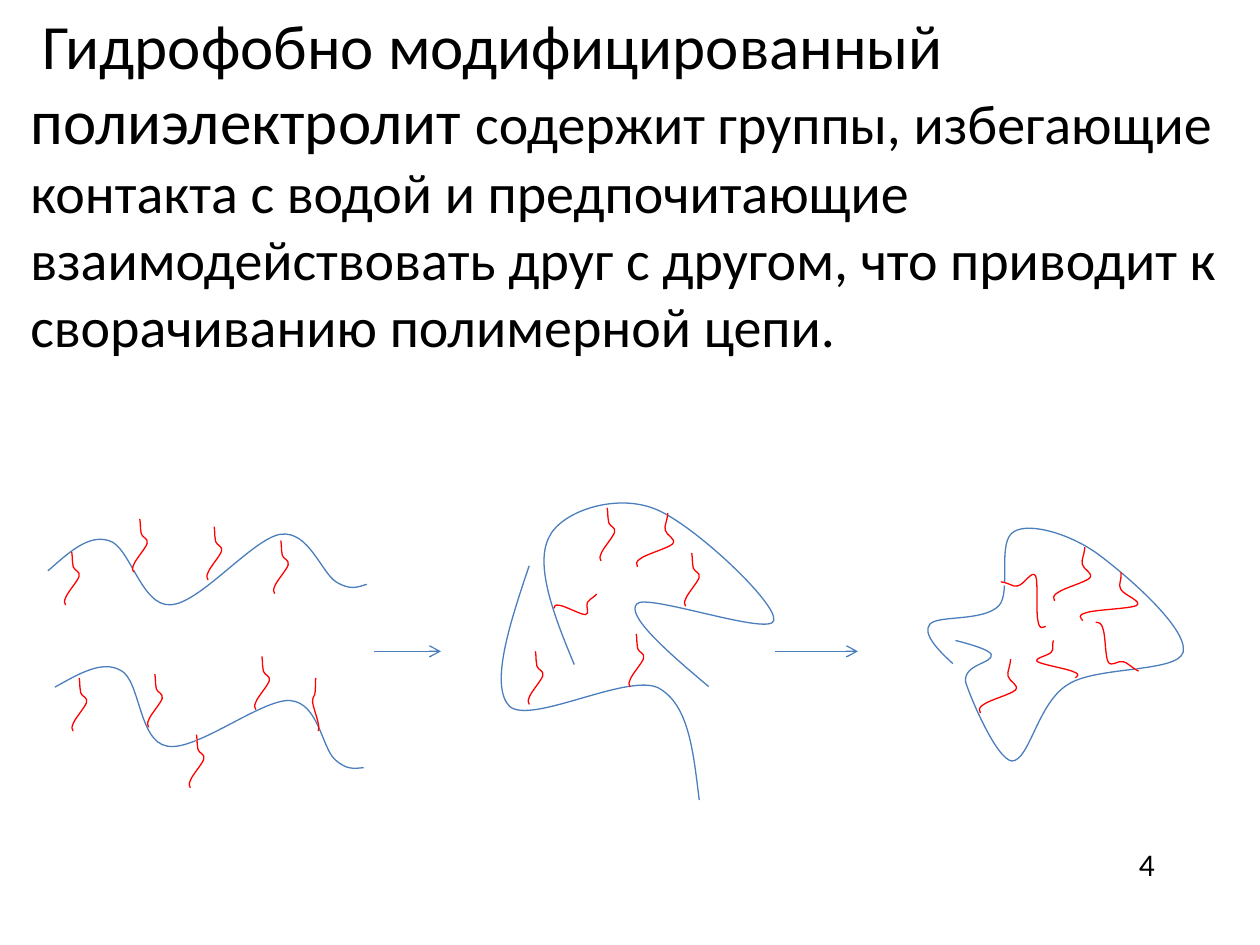
from lxml import etree
from pptx import Presentation
from pptx.dml.color import RGBColor
from pptx.enum import shapes, text
from pptx.oxml.ns import qn
from pptx.util import Pt

BLACK, WHITE, BLUE, RED = "000000", "FFFFFF", "4B7EBC", "FF0000"

BODY = [
    (" ", 32),
    ("Гидрофобно модифицированный полиэлектролит ", 36),
    ("содержит группы, избегающие контакта с водой и предпочитающие "
     "взаимодействовать друг с другом, что приводит к сворачиванию "
     "полимерной цепи.", 32),
]
BODY_BOX = (10.1, 0, 709.9, 226.8)
NUMBER_BOX = (643.7, 479.5, 28.1, 28.8)

# Bezier curves in percent of their box: a start, then three points a segment.
CHAIN = [(0, 52), (6.3, 27), (12.6, 0), (19, 9), (25.7, 16), (29.2, 102),
         (38.3, 100), (47.4, 100), (64.4, 5), (73.1, 0), (81.8, -5),
         (85.8, 55), (90.5, 68), (94.9, 80), (97.2, 75), (100, 71)]
LOOP = [(13, 88), (4, 61), (-4, 34), (2, 19), (7, 5), (30, -5), (47, 3),
        (63, 10), (101, 55), (99, 64), (98, 73), (44, 49), (40, 55),
        (35, 61), (53, 81), (71, 100)]
HOOK = [(14, 0), (4, 25), (-6, 51), (4, 60), (15, 68), (63, 46), (79, 52),
        (95, 59), (97, 80), (100, 100)]
GLOBULE = [(10, 58), (4, 52), (-2, 45), (1, 41), (4, 37), (22, 40), (28, 33),
           (33, 27), (27, 5), (34, 1), (40, -3), (56, 2), (67, 11), (78, 20),
           (102, 43), (100, 53), (98, 62), (66, 59), (55, 67), (43, 75),
           (40, 100), (33, 100), (27, 99), (17, 73), (15, 66), (14, 58),
           (26, 58), (25, 54), (24, 52), (18, 50), (11, 48)]
TAIL = [(9, 100), (3, 96), (-5, 94), (11, 85), (23, 76), (89, 55), (99, 46),
        (108, 36), (69, 36), (60, 28), (51, 20), (58, 17), (50, 0)]
MIRRORED_TAIL = [(100 - x, y) for x, y in TAIL]

# Curve, box, rotation
POLYMERS = [
    (CHAIN, (27.4, 305.3, 182.2, 40.3), 0),
    (CHAIN, (29.5, 391, 182.2, 40.3), 12.2),
    (LOOP, (311, 287.3, 132.5, 105.1), 0),
    (HOOK, (286.6, 323.3, 113, 133.9), 0),
    (GLOBULE, (529.9, 302.4, 146.2, 132.5), 0),
]
UPRIGHT_TAILS = [
    (75.6, 296.6), (36.7, 315.4), (118.1, 301), (156.2, 308.9),
    (41, 387.4), (84.2, 385.2), (108, 419.8), (145.4, 375.1),
    (391, 316.1), (342.7, 290.2), (301.7, 372.2), (359.3, 362.2),
]
TILTED_TAILS = [(367.9, 292.3), (563.8, 375.8), (606.2, 311.8)]
OTHER_TAILS = [
    (MIRRORED_TAIL, (178.6, 387.4, 3.6, 30.4), 0),
    (TAIL, (323.3, 333.4, 13.7, 25.2), 59),
    (TAIL, (620.6, 326.2, 29.5, 33.1), 18.2),
    (TAIL, (629.3, 353.5, 14.4, 36.7), 129.7),
    (MIRRORED_TAIL, (592.6, 365.8, 22.3, 23), 351.2),
    (TAIL, (574.6, 323.3, 25.2, 34.6), 298.2),
]
TAILS = ([(TAIL, (*corner, 8.6, 30.4), 0) for corner in UPRIGHT_TAILS]
         + [(TAIL, (*corner, 16.6, 34.6), 18.2) for corner in TILTED_TAILS]
         + OTHER_TAILS)

ARROW_Y = 372.2
ARROWS = [(213.8, 252), (442.8, 490.3)]


def paint(color_format, color):
    color_format.rgb = RGBColor.from_string(color)


def set_line(shape, color):
    shape.line.width = Pt(0.75)
    paint(shape.line.color, color)


def add_span(para, words, size):
    span = para.add_run()
    span.text = words
    for name, value in {"name": "Calibri", "size": Pt(size)}.items():
        setattr(span.font, name, value)
    paint(span.font.color, BLACK)


def draw_curve(page, curve, box, rotation, color, fill=None):
    left, top, width, height = (Pt(length) for length in box)
    builder = page.shapes.build_freeform(0, 0)
    builder.add_line_segments([(width, height)], close=False)
    shape = builder.convert_to_shape(left, top)
    shape.rotation = rotation
    shape.shadow.inherit = False
    if fill:
        shape.fill.solid()
        paint(shape.fill.fore_color, fill)
    else:
        shape.fill.background()
    set_line(shape, color)

    # python-pptx draws straight segments only: put Bezier segments in the outline
    outline = next(shape._element.iter(qn("a:path")))
    for step in list(outline):
        outline.remove(step)
    for index, (x, y) in enumerate(curve):
        if index == 0:
            step = etree.SubElement(outline, qn("a:moveTo"))
        elif index % 3 == 1:
            step = etree.SubElement(outline, qn("a:cubicBezTo"))
        etree.SubElement(step, qn("a:pt"), x=str(round(x * width / 100)),
                         y=str(round(y * height / 100)))


def draw_arrow(page, start, end):
    arrow = page.shapes.add_connector(
        shapes.MSO_CONNECTOR.STRAIGHT, Pt(start), Pt(ARROW_Y), Pt(end), Pt(ARROW_Y))
    set_line(arrow, BLUE)
    etree.SubElement(arrow.line._get_or_add_ln(), qn("a:tailEnd"), type="arrow")
    etree.SubElement(arrow._element.spPr, qn("a:effectLst"))


def main():
    deck = Presentation()
    deck.slide_width, deck.slide_height = Pt(720), Pt(540)
    page = deck.slides.add_slide(deck.slide_layouts[1])
    title, body = page.placeholders
    title._element.getparent().remove(title._element)

    for name, value in zip(("left", "top", "width", "height"), BODY_BOX):
        setattr(body, name, Pt(value))
    body.text_frame.auto_size = text.MSO_AUTO_SIZE.NONE
    para = body.text_frame.paragraphs[0]
    for words, size in BODY:
        add_span(para, words, size)
    layout = para._p.get_or_add_pPr()
    for name in ("marL", "indent"):
        layout.set(name, "0")
    etree.SubElement(layout, qn("a:buNone"))

    number = page.shapes.add_textbox(*(Pt(length) for length in NUMBER_BOX))
    number.text_frame.word_wrap = False
    number.text_frame.auto_size = text.MSO_AUTO_SIZE.SHAPE_TO_FIT_TEXT
    add_span(number.text_frame.paragraphs[0], "4", 18)

    for polymer in POLYMERS:
        draw_curve(page, *polymer, BLUE)
    for tail in TAILS:
        draw_curve(page, *tail, RED, WHITE)
    for start, end in ARROWS:
        draw_arrow(page, start, end)

    deck.save("out.pptx")


if __name__ == "__main__":
    main()
